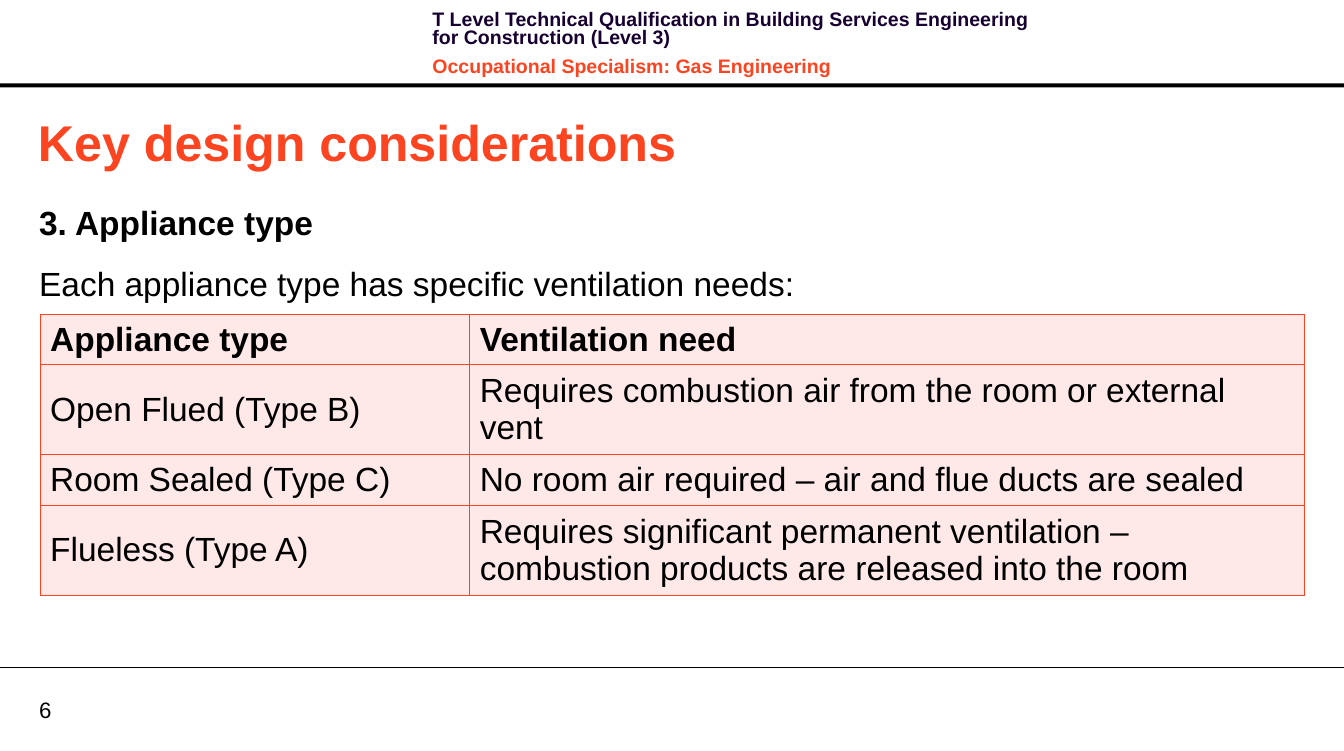
from lxml.etree import SubElement
from pptx import Presentation
from pptx.dml.color import RGBColor
from pptx.enum.shapes import MSO_CONNECTOR, MSO_SHAPE
from pptx.enum.text import MSO_ANCHOR
from pptx.oxml.ns import qn
from pptx.util import Inches, Pt

BLACK = RGBColor(0x00, 0x00, 0x00)
INDIGO = RGBColor(0x17, 0x01, 0x30)
ORANGE = RGBColor(0xFC, 0x44, 0x21)
PINK = RGBColor(0xFE, 0xE9, 0xE8)
FONT = "Arial"
SLIDE_WIDTH, SLIDE_HEIGHT = 13.39, 7.48
COLUMN_WIDTHS = (4.28, 8.32)
ROW_HEIGHTS = (0.47, 0.85, 0.47, 0.85)
APPLIANCES = (
    ("Appliance type", "Ventilation need"),
    ("Open Flued (Type B)", "Requires combustion air from the room or external vent"),
    ("Room Sealed (Type C)", "No room air required – air and flue ducts are sealed"),
    ("Flueless (Type A)", "Requires significant permanent ventilation – "
     "combustion products are released into the room"),
)


def write_paragraph(paragraph, text, size=24, color=BLACK, bold=False,
                    line_spacing=None, before=0, after=0):
    """Fill a paragraph with formatted text."""
    run = paragraph.add_run()
    run.text = text
    run.font.name = FONT
    run.font.size = Pt(size)
    run.font.bold = bold
    run.font.color.rgb = color
    paragraph.line_spacing = line_spacing
    paragraph.space_before = Pt(before)
    paragraph.space_after = Pt(after)


def add_text_frame(slide, left, top, width, height, inset=(0, 0), anchor=MSO_ANCHOR.TOP):
    """Add a wrapping text box and return its frame."""
    box = slide.shapes.add_textbox(Inches(left), Inches(top), Inches(width), Inches(height))
    frame = box.text_frame
    frame.word_wrap = True
    frame.vertical_anchor = anchor
    frame.margin_left = frame.margin_right = Inches(inset[0])
    frame.margin_top = frame.margin_bottom = Inches(inset[1])
    return frame


def add_header(slide, left, top, width, height):
    """Add the course name and the thick rule below it."""
    frame = add_text_frame(slide, left + 4.21, top + 0.07, 6.37, 0.64, inset=(0.1, 0.05))
    style = {"size": 14, "bold": True, "line_spacing": Pt(13.1), "after": 4}
    write_paragraph(frame.paragraphs[0], "T Level Technical Qualification in Building "
                    "Services Engineering for Construction (Level 3)", color=INDIGO, **style)
    write_paragraph(frame.add_paragraph(), "Occupational Specialism: Gas Engineering",
                    color=ORANGE, before=4, **style)
    rule = slide.shapes.add_shape(MSO_SHAPE.RECTANGLE, Inches(left),
                                  Inches(top + height - 0.04), Inches(width), Inches(0.04))
    rule.shadow.inherit = False
    rule.fill.solid()
    rule.fill.fore_color.rgb = BLACK
    rule.line.fill.background()


def add_body(slide, left, top, width, height):
    """Add the slide title and the lead-in text."""
    title = add_text_frame(slide, left, top, width, 0.71, inset=(0.1, 0.05),
                           anchor=MSO_ANCHOR.MIDDLE)
    write_paragraph(title.paragraphs[0], "Key design considerations",
                    size=36, color=ORANGE, bold=True)
    body = add_text_frame(slide, left + 0.11, top + 0.92, 10.24, height - 0.92)
    write_paragraph(body.paragraphs[0], "3. Appliance type", bold=True,
                    line_spacing=1.1, after=12)
    write_paragraph(body.add_paragraph(), "Each appliance type has specific ventilation needs:",
                    line_spacing=1.1, after=12)


def add_cell_borders(cell):
    """Draw a thin orange line on each side of a cell."""
    properties = cell._tc.get_or_add_tcPr()
    for side in ("a:lnL", "a:lnR", "a:lnT", "a:lnB"):
        line = SubElement(properties, qn(side), w=str(Pt(1)))
        fill = SubElement(line, qn("a:solidFill"))
        SubElement(fill, qn("a:srgbClr"), val=str(ORANGE))


def add_appliance_table(slide, left, top, width, height):
    """Add the table of ventilation needs."""
    table = slide.shapes.add_table(len(APPLIANCES), len(COLUMN_WIDTHS), Inches(left),
                                   Inches(top), Inches(width), Inches(height)).table
    for column, column_width in zip(table.columns, COLUMN_WIDTHS):
        column.width = Inches(column_width)
    for row_index, (row, row_height) in enumerate(zip(table.rows, ROW_HEIGHTS)):
        row.height = Inches(row_height)
        for cell, text in zip(row.cells, APPLIANCES[row_index]):
            add_cell_borders(cell)
            cell.fill.solid()
            cell.fill.fore_color.rgb = PINK
            cell.vertical_anchor = MSO_ANCHOR.MIDDLE
            write_paragraph(cell.text_frame.paragraphs[0], text, bold=row_index == 0)


def add_footer(slide, left, top, width, height):
    """Add the thin rule and the page number."""
    rule = slide.shapes.add_connector(MSO_CONNECTOR.STRAIGHT, Inches(left), Inches(top),
                                      Inches(left + width), Inches(top))
    rule.line.color.rgb = BLACK
    rule.line.width = Pt(0.75)
    SubElement(rule._element.spPr, qn("a:effectLst"))
    frame = add_text_frame(slide, left + 0.39, top + (height - 0.27) / 2, 0.64, 0.27,
                           anchor=MSO_ANCHOR.MIDDLE)
    write_paragraph(frame.paragraphs[0], "6", size=16)


def main():
    """Build and save the slide."""
    presentation = Presentation()
    presentation.slide_width = Inches(SLIDE_WIDTH)
    presentation.slide_height = Inches(SLIDE_HEIGHT)
    slide = presentation.slides.add_slide(presentation.slide_layouts[6])
    add_header(slide, 0, 0, SLIDE_WIDTH, 0.87)
    add_body(slide, 0.28, 1.05, 12.72, 5.45)
    add_appliance_table(slide, 0.4, 3.13, sum(COLUMN_WIDTHS), sum(ROW_HEIGHTS))
    add_footer(slide, 0, 6.65, SLIDE_WIDTH, SLIDE_HEIGHT - 6.65)
    presentation.save("out.pptx")


if __name__ == "__main__":
    main()
